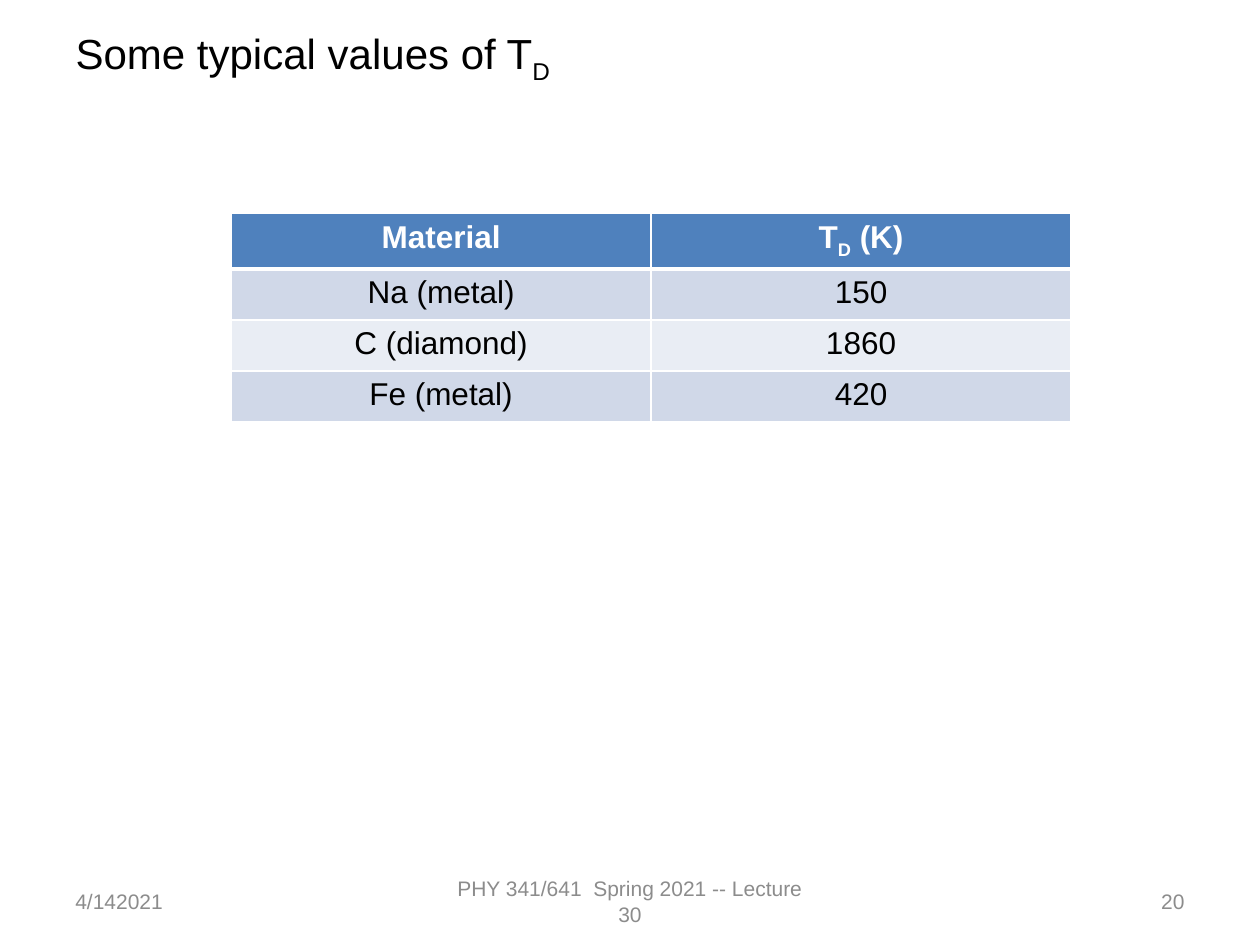
from lxml import etree
from pptx import Presentation
from pptx.dml.color import RGBColor
from pptx.enum.text import MSO_ANCHOR, MSO_AUTO_SIZE, PP_ALIGN
from pptx.oxml.ns import qn
from pptx.util import Cm, Pt

LEFT, CENTER, RIGHT = PP_ALIGN.LEFT, PP_ALIGN.CENTER, PP_ALIGN.RIGHT
TOP, MIDDLE = MSO_ANCHOR.TOP, MSO_ANCHOR.MIDDLE
FIT_SHAPE = MSO_AUTO_SIZE.SHAPE_TO_FIT_TEXT

COLORS = {
    "text": "000000",
    "footer": "8C8C8C",
    "header": "4F81BD",
    "band_dark": "D0D8E8",
    "band_light": "E9EDF4",
    "white": "FFFFFF",
}


def add_runs(paragraph, pieces, size, color, align, bold=False):
    paragraph.alignment = align
    for text, is_subscript in pieces:
        run = paragraph.add_run()
        run.text = text
        run.font.name = "Arial"
        run.font.size = Pt(size)
        run.font.bold = bold
        run.font.color.rgb = RGBColor.from_string(COLORS[color])
        if is_subscript:
            run._r.get_or_add_rPr().set("baseline", "-25000")


def add_border(cell, side, width):
    line = etree.SubElement(cell._tc.get_or_add_tcPr(), qn(f"a:{side}"), w=str(Pt(width)))
    fill = etree.SubElement(line, qn("a:solidFill"))
    etree.SubElement(fill, qn("a:srgbClr"), val=COLORS["white"])


prs = Presentation()
prs.slide_width, prs.slide_height = Cm(25.4), Cm(19.05)
slide = prs.slides.add_slide(prs.slide_layouts[5])

title = slide.shapes.title
title.left, title.top, title.width, title.height = Cm(1.27), Cm(0.43), Cm(23.06), Cm(1.27)
title.text_frame.vertical_anchor = TOP
title.text_frame.word_wrap = True
title.text_frame.auto_size = FIT_SHAPE
title_pieces = [("Some typical values of T", False), ("D", True)]
add_runs(title.text_frame.paragraphs[0], title_pieces, 24, "text", LEFT)

footers = [
    ("4/142021", 1.27, 5.93, LEFT),
    ("PHY 341/641  Spring 2021 -- Lecture 30", 8.68, 8.04, CENTER),
    ("20", 18.2, 5.93, RIGHT),
]
for text, left, width, align in footers:
    footer = slide.shapes.add_textbox(Cm(left), Cm(17.66), Cm(width), Cm(1.01))
    footer.text_frame.word_wrap = True
    footer.text_frame.vertical_anchor = MIDDLE
    add_runs(footer.text_frame.paragraphs[0], [(text, False)], 12, "footer", align)

debye_rows = [
    ([("Material", False)], [("T", False), ("D", True), (" (K)", False)]),
    ([("Na (metal)", False)], [("150", False)]),
    ([("C (diamond)", False)], [("1860", False)]),
    ([("Fe (metal)", False)], [("420", False)]),
]
debye_table = slide.shapes.add_table(
    len(debye_rows), 2, Cm(4.66), Cm(4.3), Cm(16.93), Cm(4.12)
).table
for row_index, row in enumerate(debye_rows):
    is_header = row_index == 0
    band = "header" if is_header else "band_dark" if row_index % 2 else "band_light"
    for column_index, pieces in enumerate(row):
        cell = debye_table.cell(row_index, column_index)
        for side in ("lnL", "lnR", "lnT", "lnB"):
            meets_header = (is_header and side == "lnB") or (row_index == 1 and side == "lnT")
            add_border(cell, side, 3 if meets_header else 1)
        cell.fill.solid()
        cell.fill.fore_color.rgb = RGBColor.from_string(COLORS[band])
        text_color = "white" if is_header else "text"
        add_runs(cell.text_frame.paragraphs[0], pieces, 18, text_color, CENTER, is_header)

prs.save("out.pptx")
